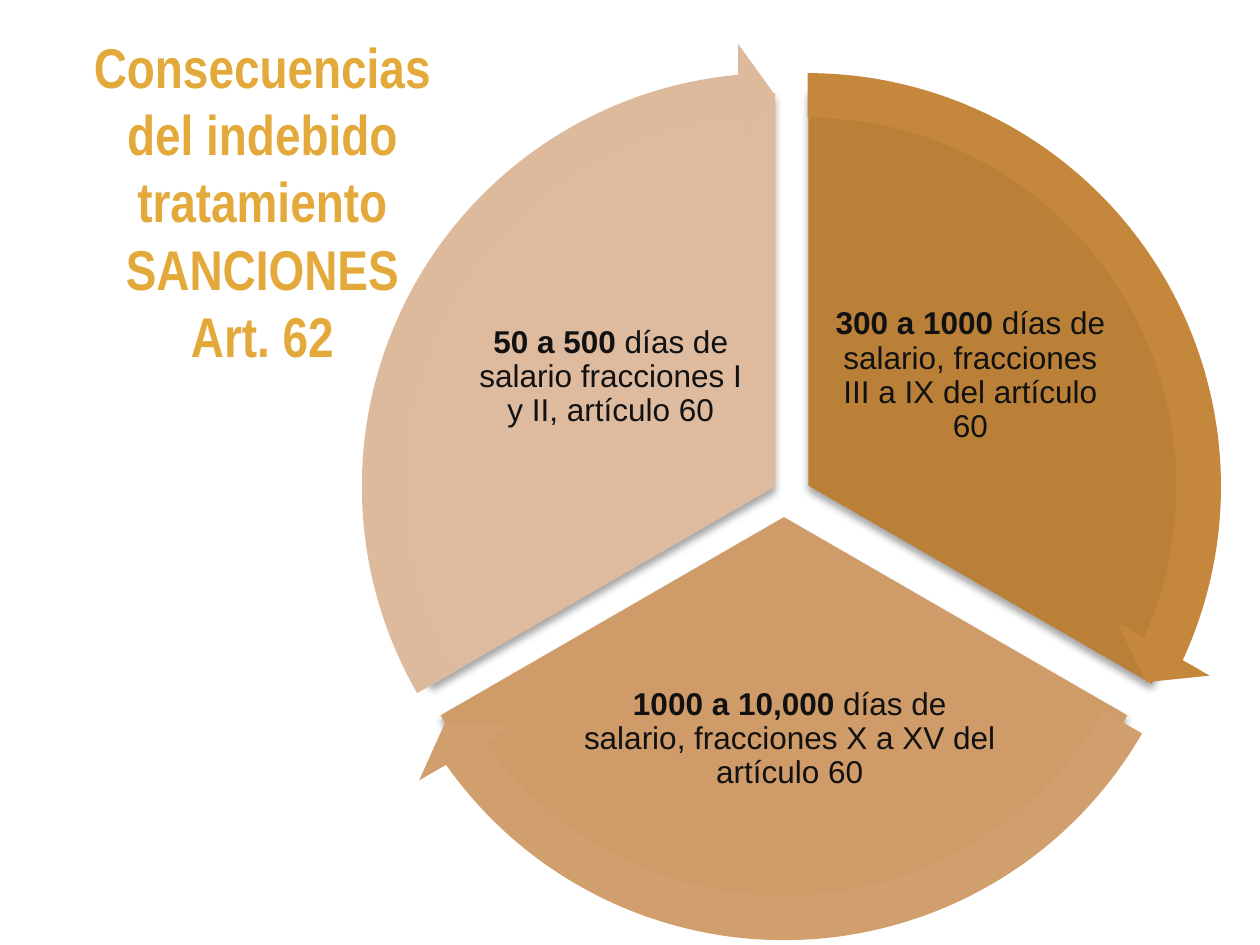
from lxml.etree import SubElement
from pptx import Presentation
from pptx.dml.color import RGBColor
from pptx.enum.shapes import MSO_SHAPE as SHAPE
from pptx.enum.text import MSO_ANCHOR as ANCHOR, PP_ALIGN as ALIGN
from pptx.oxml.ns import qn
from pptx.util import Pt

PIE, ARROW = 453, 508
UNITS_PER_DEGREE = 0.6
HEAD_ANGLE = 5.46
SECTORS = [
    dict(start=270, end=30, pie=(462, 277.5), arrow=(461.5, 278), height=PIE,
         fill="BB8038", arrow_fill="C5873B", box=(474, 147.5, 161, 134.5),
         text=("300 a 1000 ", "días de salario, fracciones III a IX del artículo 60")),
    dict(start=30, end=150, pie=(448, 295.5), arrow=(448, 301), height=PIE,
         fill="CF9B69", arrow_fill="D19E6D", box=(330, 363, 242.5, 119),
         text=("1000 a 10,000 ", "días de salario, fracciones X a XV del artículo 60")),
    dict(start=150, end=270, pie=(443, 278), arrow=(443, 278), height=449.5,
         fill="DEBA9E", arrow_fill="DEBA9D", box=(268.5, 148.5, 161, 134),
         text=("50 a 500", " días de salario fracciones I y II, artículo 60")),
]


def color(value):
    return RGBColor.from_string(value)


class Deck:
    """Holds the style and the current slide, and draws its elements."""

    font, title_font = "Arial", "Arial Narrow"
    ink, gold = "111111", "E3AA3B"

    def __init__(self, slide):
        self.s = slide

    def shape(self, kind, center, width, height, fill, adjustments):
        x, y = center
        sp = self.s.shapes.add_shape(kind, Pt(x - width / 2), Pt(y - height / 2),
                                     Pt(width), Pt(height))
        for i, value in enumerate(adjustments):
            sp.adjustments[i] = value
        sp.fill.solid()
        sp.fill.fore_color.rgb = color(fill)
        sp.line.fill.background()
        sp.shadow.inherit = False
        return sp

    def pie(self, center, height, start, end, fill):
        sp = self.shape(SHAPE.PIE, center, PIE, height, fill,
                        (start * UNITS_PER_DEGREE, end * UNITS_PER_DEGREE))
        effects = sp._element.spPr.find(qn("a:effectLst"))
        shadow = SubElement(effects, qn("a:outerShdw"), blurRad=str(Pt(4)),
                            dist=str(Pt(3)), dir="5400000", rotWithShape="0")
        tone = SubElement(shadow, qn("a:srgbClr"), val="000000")
        SubElement(tone, qn("a:alpha"), val="35000")

    def arrow(self, center, start, end, fill):
        angles = (HEAD_ANGLE, end - HEAD_ANGLE, start)
        self.shape(SHAPE.CIRCULAR_ARROW, center, ARROW, ARROW, fill,
                   (0.05, *(a * UNITS_PER_DEGREE for a in angles), 0.06))

    def text_box(self, box, font, size, ink):
        tf = self.s.shapes.add_textbox(*map(Pt, box)).text_frame
        tf.word_wrap = True
        p = tf.paragraphs[0]
        p.alignment = ALIGN.CENTER
        p.font.name, p.font.size = font, Pt(size)
        p.font.color.rgb = color(ink)
        return tf, p

    def title(self, box, text):
        _, p = self.text_box(box, self.title_font, 32, self.gold)
        p.font.bold = True
        p.text = text

    def label(self, box, amount, detail):
        tf, p = self.text_box(box, self.font, 18, self.ink)
        tf.vertical_anchor = ANCHOR.MIDDLE
        tf.margin_left = tf.margin_right = tf.margin_top = tf.margin_bottom = Pt(2)
        p.line_spacing = 0.9
        for text, bold in ((amount, True), (detail, False)):
            r = p.add_run()
            r.text, r.font.bold = text, bold


def main():
    prs = Presentation()
    prs.slide_width, prs.slide_height = Pt(720), Pt(540)
    deck = Deck(prs.slides.add_slide(prs.slide_layouts[6]))
    deck.title((36.5, 15, 227, 255),
               "Consecuencias del indebido tratamiento\nSANCIONES\nArt. 62")
    for s in SECTORS:
        deck.pie(s["pie"], s["height"], s["start"], s["end"], s["fill"])
        deck.label(s["box"], *s["text"])
    for s in SECTORS:
        deck.arrow(s["arrow"], s["start"], s["end"], s["arrow_fill"])
    prs.save("out.pptx")


if __name__ == "__main__":
    main()
